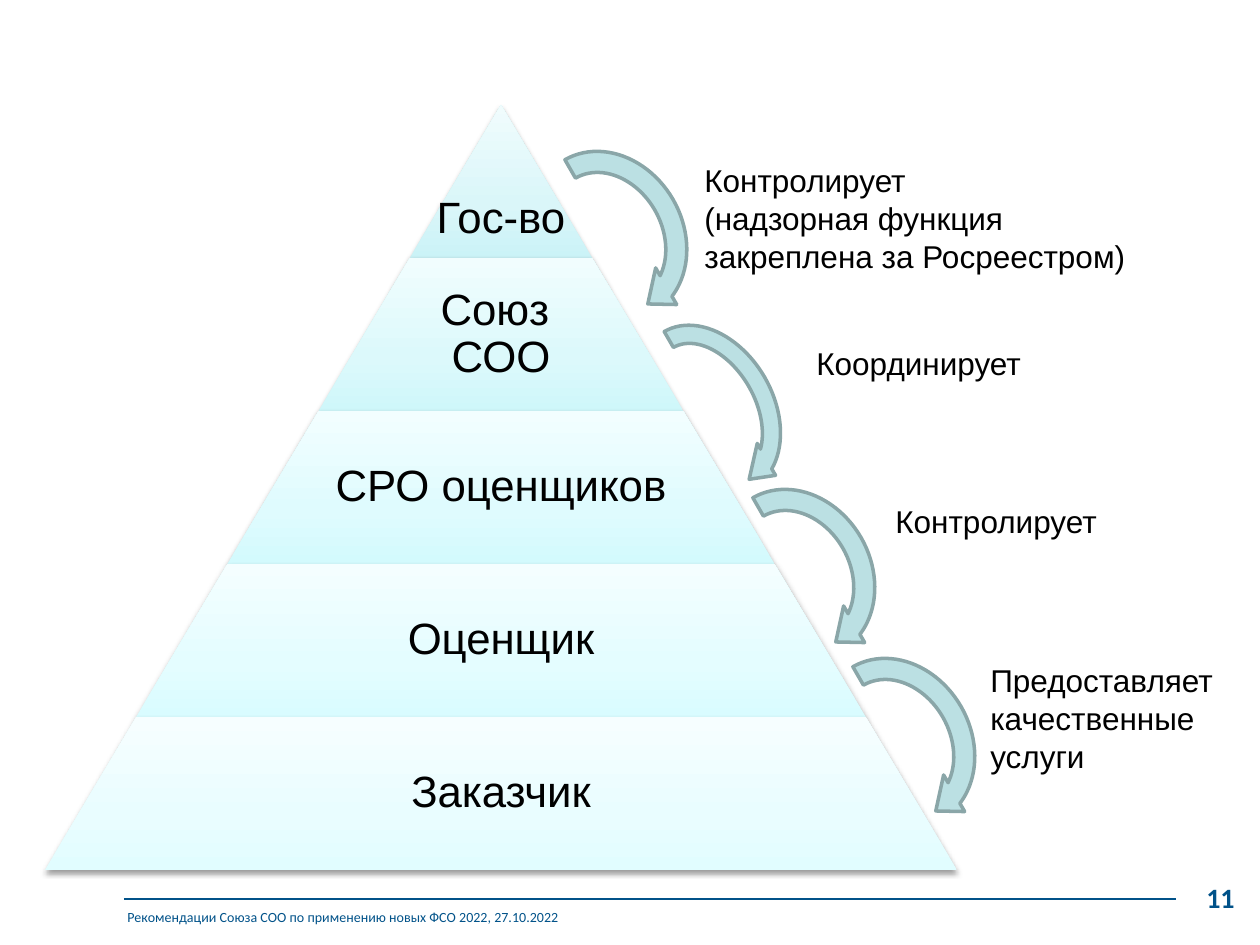
from dataclasses import dataclass

from lxml import etree
from pptx import Presentation
from pptx.dml.color import RGBColor
from pptx.enum.shapes import MSO_CONNECTOR, MSO_SHAPE
from pptx.enum.text import MSO_ANCHOR, PP_ALIGN
from pptx.oxml import parse_xml
from pptx.oxml.ns import nsdecls, qn
from pptx.util import Emu, Pt

TRAPEZOID = MSO_SHAPE.TRAPEZOID
CIRCULAR_ARROW = MSO_SHAPE.CIRCULAR_ARROW
STRAIGHT = MSO_CONNECTOR.STRAIGHT
MIDDLE = MSO_ANCHOR.MIDDLE
LEFT, CENTER, RIGHT = PP_ALIGN.LEFT, PP_ALIGN.CENTER, PP_ALIGN.RIGHT


@dataclass(frozen=True)
class Theme:
    body_font: str = "Arial"
    footer_font: str = "Calibri"
    text: str = "000000"
    accent: str = "015289"
    arrow_fill: str = "BBE0E3"
    arrow_line: str = "8AA6A8"
    level_size: int = 25
    label_size: int = 18
    number_size: int = 16
    footer_size: int = 8


THEME = Theme()

# Pyramid geometry, in px
APEX_X, APEX_Y = 501, 105
BASE_WIDTH, LEVEL_HEIGHT = 912, 153
SLOPE = 0.597
INSET = 4

# Level name and its gradient from bottom to top
LEVELS = [
    ("Гос-во", ("CBF3F7", "DAF6F9", "F0FCFD")),
    ("Союз \vСОО", ("CFF7FA", "DCF9FB", "F1FDFE")),
    ("СРО оценщиков", ("D3FAFD", "DFFBFE", "F2FEFF")),
    ("Оценщик", ("D9FCFF", "E4FDFF", "F4FEFF")),
    ("Заказчик", ("E1FDFF", "E9FDFF", "F6FEFF")),
]
GRADIENT_STOPS = (0, 35000, 100000)

# Relation between neighbouring levels: label, label box, arrow box
RELATIONS = [
    ("Контролирует \v(надзорная функция закреплена за Росреестром)",
     (692, 155, 456, 127), (510, 152, 198, 169)),
    ("Координирует", (804, 338, 307, 50), (610, 336, 198, 147)),
    ("Контролирует", (883, 496, 307, 50), (698, 490, 198, 169)),
    ("Предоставляет качественные \vуслуги",
     (978, 655, 267, 165), (798, 659, 198, 169)),
]


def px(length):
    return Emu(round(length * 914400 / 126))


def box(*lengths):
    return [px(length) for length in lengths]


def rgb(color):
    return RGBColor.from_string(color)


def write(frame, text, size, font=THEME.body_font, color=THEME.text,
          align=LEFT, bold=False):
    paragraph = frame.paragraphs[0]
    paragraph.text = text
    paragraph.alignment = align
    paragraph.font.name = font
    paragraph.font.size = Pt(size)
    paragraph.font.bold = bold
    paragraph.font.color.rgb = rgb(color)
    return paragraph


def add_text(slide, bounds, text, size, **style):
    frame = slide.shapes.add_textbox(*box(*bounds)).text_frame
    frame.word_wrap = True
    write(frame, text, size, **style)


def shade(level, colors):
    """Give a level its vertical gradient and soft shadow."""
    stops = "".join(
        f'<a:gs pos="{position}"><a:srgbClr val="{color}"/></a:gs>'
        for position, color in zip(GRADIENT_STOPS, colors))
    gradient = parse_xml(
        f'<a:gradFill {nsdecls("a")} rotWithShape="1"><a:gsLst>{stops}</a:gsLst>'
        '<a:lin ang="16200000" scaled="0"/></a:gradFill>')
    shadow = parse_xml(
        f'<a:effectLst {nsdecls("a")}>'
        '<a:outerShdw blurRad="40000" dist="20000" dir="5400000" rotWithShape="0">'
        '<a:srgbClr val="000000"><a:alpha val="38000"/></a:srgbClr>'
        '</a:outerShdw></a:effectLst>')
    level.line.fill.background()
    properties = level.element.spPr
    properties.find(qn("a:ln")).addprevious(gradient)
    properties.append(shadow)


def add_level(slide, number, name, colors):
    width = BASE_WIDTH * number / len(LEVELS)
    top = APEX_Y + LEVEL_HEIGHT * (number - 1)
    level = slide.shapes.add_shape(
        TRAPEZOID, *box(APEX_X - width / 2, top, width, LEVEL_HEIGHT))
    level.adjustments[0] = SLOPE
    shade(level, colors)

    # A trapezoid's text area starts lower than its top edge; the bottom inset
    # balances that, except in the apex, where the name sits low
    frame = level.text_frame
    frame.word_wrap = False
    frame.vertical_anchor = MIDDLE
    frame.margin_left = frame.margin_right = px(INSET)
    is_apex = number == 1
    frame.margin_top = px(24 if is_apex else INSET)
    frame.margin_bottom = px(0 if is_apex else INSET + LEVEL_HEIGHT / (3 * number))
    write(frame, name, THEME.level_size, align=CENTER).line_spacing = 0.9


def add_arrow(slide, bounds):
    arrow = slide.shapes.add_shape(CIRCULAR_ARROW, *box(*bounds))
    arrow.rotation = 60.1
    arrow.shadow.inherit = False
    arrow.fill.solid()
    arrow.fill.fore_color.rgb = rgb(THEME.arrow_fill)
    arrow.line.color.rgb = rgb(THEME.arrow_line)
    arrow.line.width = Pt(2)


def add_footer(slide):
    rule = slide.shapes.add_connector(STRAIGHT, *box(124, 899, 1176, 899))
    rule.line.color.rgb = rgb(THEME.accent)
    rule.line.width = Pt(1.5)
    etree.SubElement(rule.element.spPr, qn("a:effectLst"))
    style = {"font": THEME.footer_font, "color": THEME.accent}
    add_text(slide, (917, 874, 330, 47), "11", THEME.number_size,
             align=RIGHT, bold=True, **style)
    add_text(slide, (115, 902, 1051, 30),
             "Рекомендации Союза СОО по применению новых ФСО 2022, 27.10.2022",
             THEME.footer_size, **style)


def main():
    deck = Presentation()
    deck.slide_width, deck.slide_height = box(1260, 945)
    slide = deck.slides.add_slide(deck.slide_layouts[6])

    add_footer(slide)

    # Pyramid
    for number, (name, colors) in enumerate(LEVELS, start=1):
        add_level(slide, number, name, colors)

    # Relations down the right side
    for label, label_bounds, arrow_bounds in RELATIONS:
        add_arrow(slide, arrow_bounds)
        add_text(slide, label_bounds, label, THEME.label_size)

    deck.save("out.pptx")


if __name__ == "__main__":
    main()
